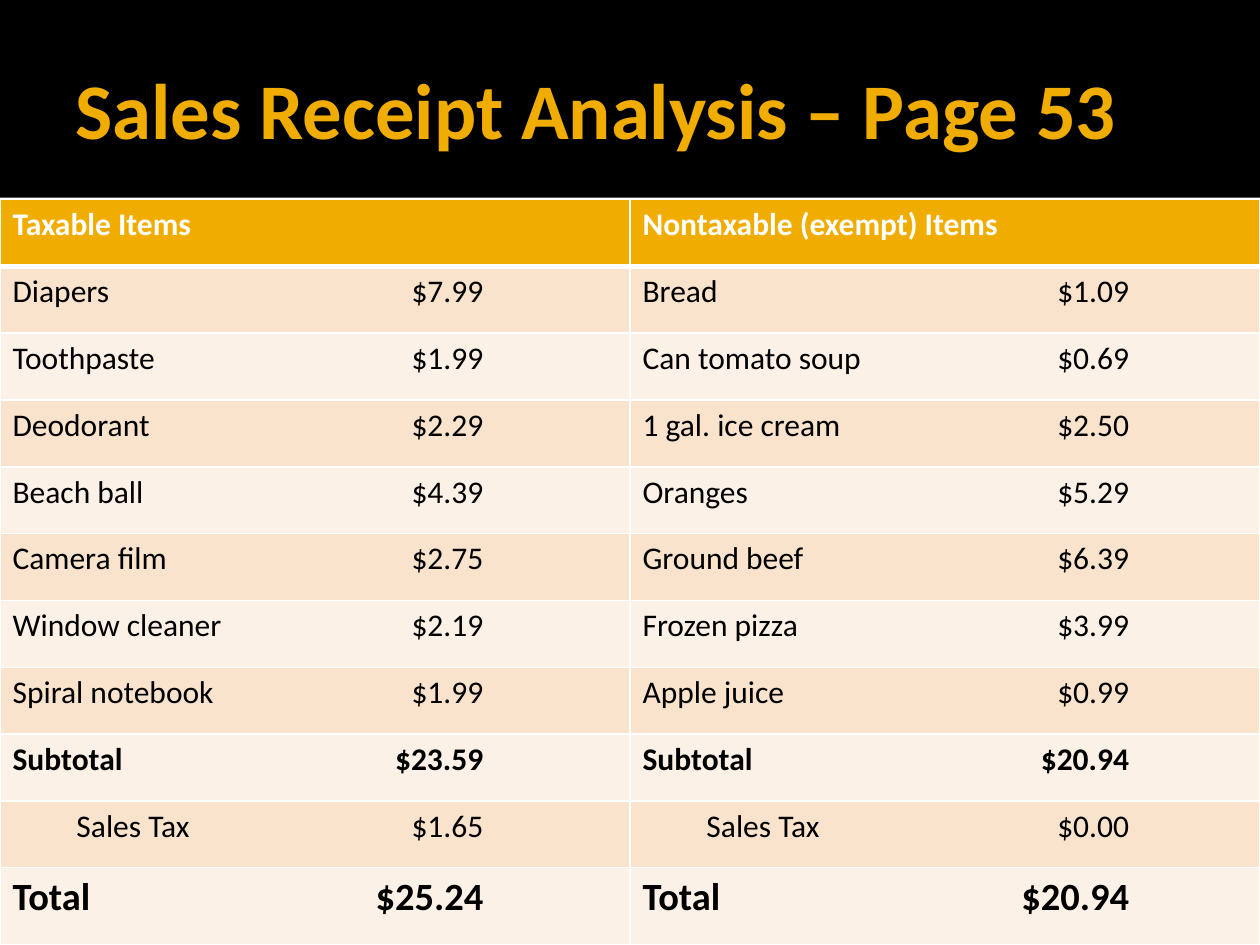
from lxml.etree import SubElement
from pptx import Presentation
from pptx.dml.color import RGBColor as RGB
from pptx.enum.shapes import MSO_SHAPE as SHAPE
from pptx.enum.text import MSO_ANCHOR as ANCHOR
from pptx.oxml import parse_xml
from pptx.oxml.ns import nsdecls, qn
from pptx.util import Pt

COLORS = {"gold": "F0AD00", "black": "000000", "white": "FFFFFF",
          "peach": "F9E3CC", "cream": "FCF1E7"}
WIDTH, HEIGHT, BANNER = 720, 540, 113
TABLE_TOP, ROW_HEIGHT, TOTAL_HEIGHT = 114, 38.2, 44
PRICE_STOPS = [269, 278]  # right-aligned price position in each column
TAX_INDENT = 36.5

TAXABLE = [("Diapers", "$7.99"), ("Toothpaste", "$1.99"), ("Deodorant", "$2.29"),
           ("Beach ball", "$4.39"), ("Camera film", "$2.75"),
           ("Window cleaner", "$2.19"), ("Spiral notebook", "$1.99"),
           ("Subtotal", "$23.59"), ("Sales Tax", "$1.65"), ("Total", "$25.24")]
EXEMPT = [("Bread", "$1.09"), ("Can tomato soup", "$0.69"),
          ("1 gal. ice cream", "$2.50"), ("Oranges", "$5.29"),
          ("Ground beef", "$6.39"), ("Frozen pizza", "$3.99"),
          ("Apple juice", "$0.99"), ("Subtotal", "$20.94"),
          ("Sales Tax", "$0.00"), ("Total", "$20.94")]
RECEIPT = [("Taxable Items", TAXABLE), ("Nontaxable (exempt) Items", EXEMPT)]


def add_text(paragraph, text, size, color, bold):
    run = paragraph.add_run()
    run.text = text
    run.font.name = "Calibri"
    run.font.size = Pt(size)
    run.font.bold = bold
    run.font.color.rgb = RGB.from_string(COLORS[color])


def style_cell(cell, fill, widths):
    cell.fill.solid()
    cell.fill.fore_color.rgb = RGB.from_string(COLORS[fill])
    for i, (side, width) in enumerate(zip("LRTB", widths)):
        cell._tc.get_or_add_tcPr().insert(i, parse_xml(
            f'<a:ln{side} {nsdecls("a")} w="{Pt(width)}"><a:solidFill>'
            f'<a:srgbClr val="{COLORS["white"]}"/></a:solidFill></a:ln{side}>'))


prs = Presentation()
prs.slide_width, prs.slide_height = Pt(WIDTH), Pt(HEIGHT)
slide = prs.slides.add_slide(prs.slide_layouts[6])

# Banner and the thin strip below it
for top, height, color in [(BANNER, 3.6, "white"), (0, BANNER, "black")]:
    band = slide.shapes.add_shape(SHAPE.RECTANGLE, 0, Pt(top), Pt(WIDTH), Pt(height))
    band.shadow.inherit = False
    band.fill.solid()
    band.fill.fore_color.rgb = RGB.from_string(COLORS[color])
    band.line.fill.background()

# Title
title = slide.shapes.add_textbox(Pt(36), Pt(12.24), Pt(648), Pt(98.64)).text_frame
title.word_wrap = True
title.vertical_anchor = ANCHOR.MIDDLE
title.margin_right = Pt(3.6)
add_text(title.paragraphs[0], "Sales Receipt Analysis – Page 53", 45, "gold", True)

# Receipt table
row_count = len(TAXABLE) + 1
receipt = slide.shapes.add_table(row_count, len(RECEIPT), 0, Pt(TABLE_TOP),
                                 Pt(WIDTH), Pt(HEIGHT - TABLE_TOP)).table
for row in receipt.rows:
    row.height = Pt(ROW_HEIGHT)
receipt.rows[row_count - 1].height = Pt(TOTAL_HEIGHT)

for col, (heading, items) in enumerate(RECEIPT):
    receipt.columns[col].width = Pt(WIDTH / len(RECEIPT))
    header = receipt.cell(0, col)
    style_cell(header, "gold", [1, 1, 1, 3])
    add_text(header.text_frame.paragraphs[0], heading, 18, "white", True)

    for row, (item, price) in enumerate(items, start=1):
        cell = receipt.cell(row, col)
        style_cell(cell, "peach" if row % 2 else "cream", [1, 1, 3 if row == 1 else 1, 1])
        line = cell.text_frame.paragraphs[0]
        stops = [(PRICE_STOPS[col], "r")]
        text = f"{item}\t{price}"
        if item == "Sales Tax":
            stops.insert(0, (TAX_INDENT, "l"))
            text = "\t" + text
        tabs = SubElement(line._p.get_or_add_pPr(), qn("a:tabLst"))
        for position, align in stops:
            SubElement(tabs, qn("a:tab"), pos=str(Pt(position)), algn=align)
        add_text(line, text, 22 if item == "Total" else 18, "black",
                 item in ("Subtotal", "Total"))

prs.save("out.pptx")
